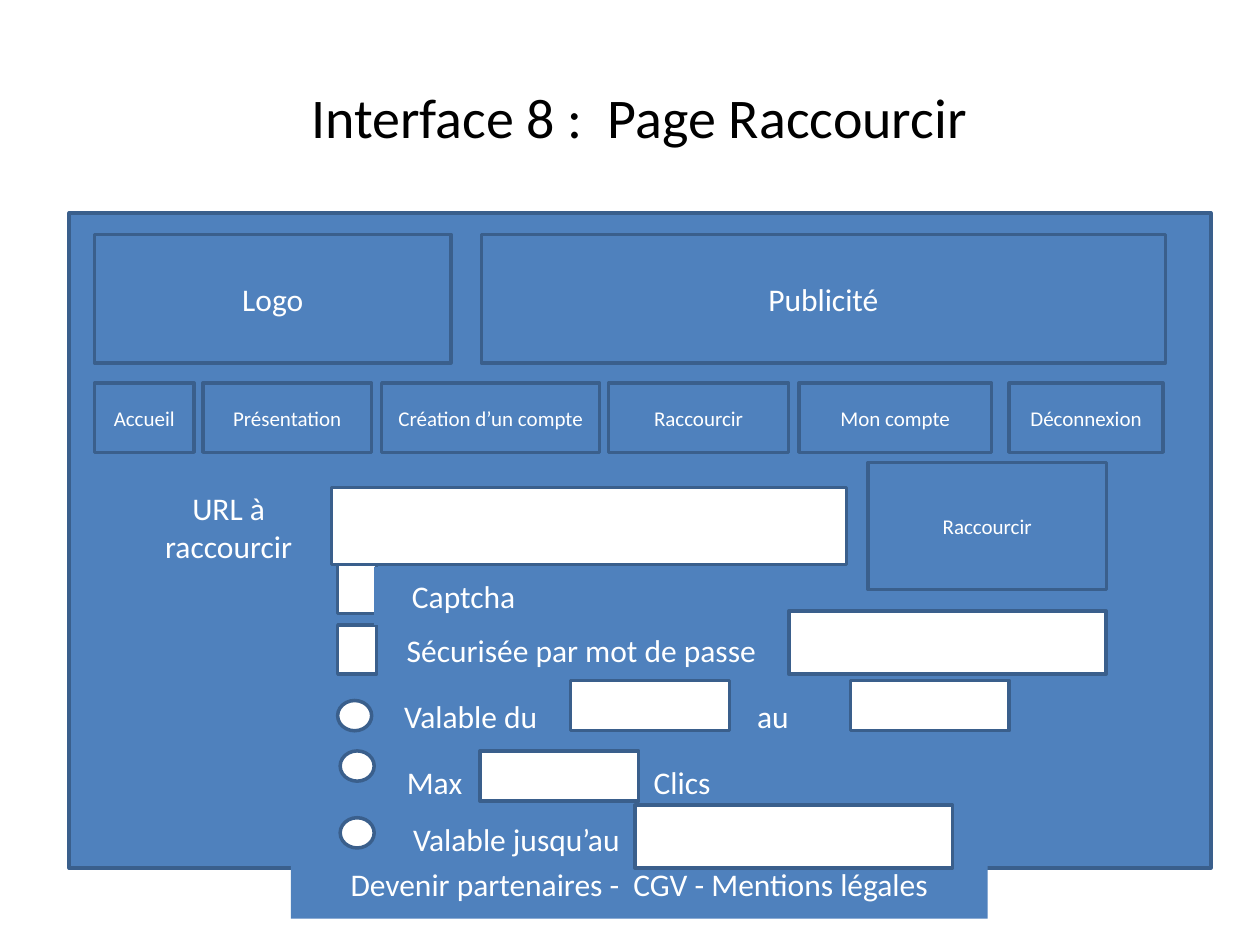
"""Build the wireframe slide of the link shortening page."""
import pptx
import pptx.util
import pptx.dml.color
import pptx.enum.shapes
import pptx.enum.text
from lxml import etree

SHAPE = pptx.enum.shapes.MSO_SHAPE
ALIGN = pptx.enum.text.PP_ALIGN
MIDDLE = pptx.enum.text.MSO_ANCHOR.MIDDLE
BLUE, EDGE, WHITE, BLACK = "4F81BD", "3A5F8C", "FFFFFF", "000000"
INCH = pptx.util.Inches

TITLE = "Interface 8\u00a0:  Page Raccourcir"
TITLE_BOX = (0.5, 0.3, 9.15, 1.25)
PANEL = (0.55, 1.69, 9.06, 5.2)
MARGIN = 0.75
HEADER_TOP, HEADER_HEIGHT = 1.86, 1.02
MENU_TOP, MENU_HEIGHT = 3.04, 0.55

HEADER = [("Logo", MARGIN, 2.83), ("Publicité", 3.82, 5.43)]
MENU = [
    ("Accueil", MARGIN, 0.79),
    ("Présentation", 1.61, 1.34),
    ("Création d’un compte", 3.03, 1.73),
    ("Raccourcir", 4.83, 1.43),
    ("Mon compte", 6.34, 1.53),
    ("Déconnexion", 8.01, 1.22),
]
FOOTER = ("Devenir partenaires -  CGV - Mentions légales", (2.31, 6.74, 5.53, 0.55))
URL_LABEL = ("URL à raccourcir", (1.15, 3.68, 1.33, 1))
URL_FIELD = (2.63, 3.87, 4.09, 0.61)
SUBMIT = ("Raccourcir", (6.89, 3.67, 1.89, 1.01))

INPUTS = {
    "check": (SHAPE.RECTANGLE, 0.31, 0.39),
    "radio": (SHAPE.OVAL, 0.27, 0.24),
    "short": (SHAPE.RECTANGLE, 1.26, 0.4),
    "long": (SHAPE.RECTANGLE, 2.52, 0.5),
}
OPTIONS = [
    {"label": "Sécurisée par mot de passe", "box": (3.03, 4.84, 3.17, 0.63),
     "align": ALIGN.CENTER, "inputs": [("check", 2.68, 4.96), ("long", 6.26, 4.85)]},
    {"label": "Valable du\tau", "box": (3.11, 5.37, 3.78, 0.63), "tab": 2.8,
     "inputs": [("radio", 2.68, 5.56), ("short", 4.53, 5.4), ("short", 6.75, 5.4)]},
    {"label": "Max\tClics", "box": (3.13, 5.89, 3.78, 0.63), "tab": 1.96,
     "inputs": [("radio", 2.7, 5.96), ("short", 3.81, 5.96)]},
    {"label": "Valable jusqu’au", "box": (3.18, 6.43, 3.78, 0.46),
     "inputs": [("radio", 2.7, 6.49), ("long", 5.04, 6.39)]},
]
CAPTCHA = ("Captcha", (2.97, 4.5, 1.42, 0.46))
CAPTCHA_CHECK = ("check", 2.68, 4.48)


def rgb(value):
    return pptx.dml.color.RGBColor.from_string(value)


def write(frame, text, size, color, align):
    frame.text = text
    frame.word_wrap = True
    frame.vertical_anchor = MIDDLE
    paragraph = frame.paragraphs[0]
    paragraph.alignment = align
    font = paragraph.runs[0].font
    for key, value in {"name": "Calibri", "size": pptx.util.Pt(size)}.items():
        setattr(font, key, value)
    font.color.rgb = rgb(color)
    return paragraph


def add_block(slide, box, fill=BLUE, edge=EDGE, form=SHAPE.RECTANGLE):
    block = slide.shapes.add_shape(form, *map(INCH, box))
    block.shadow.inherit = False
    block.fill.solid()
    block.fill.fore_color.rgb = rgb(fill)
    if edge:
        block.line.color.rgb = rgb(edge)
        block.line.width = pptx.util.Pt(2)
    else:
        block.line.fill.background()
    return block


def add_button(slide, text, box, size):
    write(add_block(slide, box).text_frame, text, size, WHITE, ALIGN.CENTER)


def add_label(slide, text, box, align=ALIGN.CENTER, tab=None):
    block = add_block(slide, box, edge=None)
    paragraph = write(block.text_frame, text, 18, WHITE, align)
    if tab:
        properties = paragraph.runs[0].font._element.getparent().getparent().get_or_add_pPr()
        namespace = "{http://schemas.openxmlformats.org/drawingml/2006/main}"
        stops = etree.SubElement(properties, namespace + "tabLst")
        etree.SubElement(stops, namespace + "tab", pos=str(INCH(tab)), algn="l")


def add_input(slide, kind, left, top):
    form, width, height = INPUTS[kind]
    add_block(slide, (left, top, width, height), WHITE, form=form)


def main():
    deck = pptx.Presentation()
    deck.slide_width, deck.slide_height = INCH(10), INCH(7.5)
    slide = deck.slides.add_slide(deck.slide_layouts[5])
    heading = slide.shapes.title
    for side, value in zip(("left", "top", "width", "height"), TITLE_BOX):
        setattr(heading, side, INCH(value))
    write(heading.text_frame, TITLE, 32, BLACK, ALIGN.CENTER)

    add_block(slide, PANEL)
    bands = [(HEADER, HEADER_TOP, HEADER_HEIGHT, 18), (MENU, MENU_TOP, MENU_HEIGHT, 12)]
    for entries, top, height, size in bands:
        for text, left, width in entries:
            add_button(slide, text, (left, top, width, height), size)

    add_label(slide, *FOOTER)
    add_label(slide, *URL_LABEL)
    add_block(slide, URL_FIELD, WHITE)
    add_button(slide, *SUBMIT, 12)
    for option in OPTIONS:
        add_label(slide, option["label"], option["box"],
                  option.get("align", ALIGN.LEFT), option.get("tab"))
        for entry in option["inputs"]:
            add_input(slide, *entry)
    add_input(slide, *CAPTCHA_CHECK)
    add_label(slide, *CAPTCHA)
    deck.save("out.pptx")


if __name__ == "__main__":
    main()
